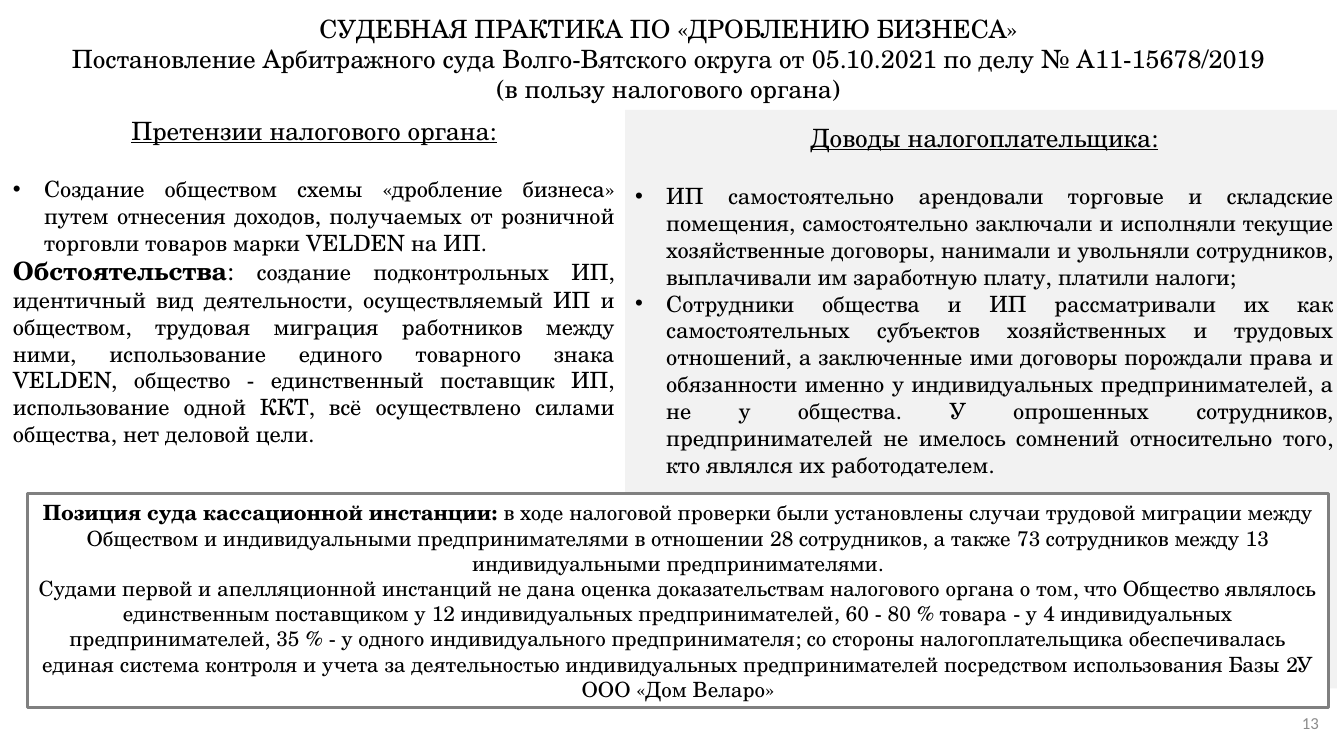
from dataclasses import dataclass

from lxml.etree import SubElement
from pptx import Presentation
from pptx.dml.color import RGBColor
from pptx.enum.shapes import MSO_SHAPE as Shape
from pptx.enum.text import MSO_ANCHOR as Anchor, PP_ALIGN as Align
from pptx.oxml.ns import qn
from pptx.util import Pt

EMU_PER_PX = 9144  # 100 px to the inch


def px(length):
    return length * EMU_PER_PX


@dataclass(frozen=True)
class Theme:
    serif: str = "TeX Gyre Schola"
    sans: str = "Calibri"
    ink: str = "000000"
    paper: str = "FFFFFF"
    panel: str = "F2F2F2"
    frame: str = "808080"
    muted: str = "8C8C8C"
    heading: float = 18
    body: float = 16
    verdict: float = 15
    number: float = 12
    heading_gap: float = 21.5
    frame_width: float = 2.25
    hang: int = 31


THEME = Theme()


def span(text, size=THEME.body, font=THEME.serif, color=THEME.ink, bold=False, underline=False):
    """Describe one piece of text and its format."""
    return dict(text=text, size=size, font=font, color=color, bold=bold, underline=underline)


def para(*spans, align=Align.JUSTIFY, bullet=False, gap=0):
    return dict(spans=spans, align=align, bullet=bullet, gap=gap)


class SlideBuilder:
    def __init__(self, deck, theme):
        self.theme = theme
        self.page = deck.slides.add_slide(deck.slide_layouts[6])

    def panel(self, left, top, width, height, fill, line=None):
        shape = self.page.shapes.add_shape(Shape.RECTANGLE, px(left), px(top), px(width), px(height))
        shape.shadow.inherit = False
        shape.fill.solid()
        shape.fill.fore_color.rgb = RGBColor.from_string(fill)
        if line:
            shape.line.color.rgb = RGBColor.from_string(line)
            shape.line.width = Pt(self.theme.frame_width)
        else:
            shape.line.fill.background()
        return shape

    def text(self, left, top, width, height, paras, anchor=Anchor.TOP):
        box = self.page.shapes.add_textbox(px(left), px(top), px(width), px(height))
        self.fill_text(box, paras, anchor)

    def fill_text(self, box, paras, anchor):
        frame = box.text_frame
        frame.word_wrap = True
        frame.vertical_anchor = anchor
        for index, item in enumerate(paras):
            paragraph = frame.add_paragraph() if index else frame.paragraphs[0]
            paragraph.alignment = item["align"]
            paragraph.space_after = Pt(item["gap"])
            if item["bullet"]:
                self.bullet(paragraph)
            for piece in item["spans"]:
                run = paragraph.add_run()
                run.text = piece["text"]
                run.font.name = piece["font"]
                run.font.size = Pt(piece["size"])
                run.font.bold = piece["bold"]
                run.font.underline = piece["underline"]
                run.font.color.rgb = RGBColor.from_string(piece["color"])

    def bullet(self, paragraph):
        props = paragraph._p.get_or_add_pPr()
        props.set("marL", str(px(self.theme.hang)))
        props.set("indent", str(-px(self.theme.hang)))
        SubElement(props, qn("a:buFont")).set("typeface", "Arial")
        SubElement(props, qn("a:buChar")).set("char", "•")


def column_heading(text):
    return para(span(text, size=THEME.heading, underline=True),
                align=Align.CENTER, gap=THEME.heading_gap)


TITLE = (
    "СУДЕБНАЯ ПРАКТИКА ПО «ДРОБЛЕНИЮ БИЗНЕСА»",
    "Постановление Арбитражного суда Волго-Вятского округа от 05.10.2021 по делу № А11-15678/2019",
    "(в пользу налогового органа)",
)
CLAIM = (
    "Создание обществом схемы «дробление бизнеса» путем отнесения доходов, получаемых "
    "от розничной торговли товаров марки VELDEN на ИП."
)
CIRCUMSTANCES = (
    " создание подконтрольных ИП, идентичный вид деятельности, осуществляемый ИП и обществом, "
    "трудовая миграция работников между ними, использование единого товарного знака VELDEN, "
    "общество - единственный поставщик ИП, использование одной ККТ, всё осуществлено силами "
    "общества, нет деловой цели."
)
ARGUMENTS = (
    "ИП самостоятельно арендовали торговые и складские помещения, самостоятельно заключали и "
    "исполняли текущие хозяйственные договоры, нанимали и увольняли сотрудников, выплачивали им "
    "заработную плату, платили налоги;",
    "Сотрудники общества и ИП рассматривали их как самостоятельных субъектов хозяйственных и "
    "трудовых отношений, а заключенные ими договоры порождали права и обязанности именно у "
    "индивидуальных предпринимателей, а не у общества. У опрошенных сотрудников, "
    "предпринимателей не имелось сомнений относительно того, кто являлся их работодателем.",
)
FINDING = (
    "в ходе налоговой проверки были установлены случаи трудовой миграции между Обществом и "
    "индивидуальными предпринимателями в отношении 28 сотрудников, а также 73 сотрудников между "
    "13 индивидуальными предпринимателями."
)
CRITIQUE = (
    "Судами первой и апелляционной инстанций не дана оценка доказательствам налогового органа о "
    "том, что Общество являлось единственным поставщиком у 12 индивидуальных предпринимателей, "
    "60 - 80 % товара - у 4 индивидуальных предпринимателей, 35 % - у одного индивидуального "
    "предпринимателя; со стороны налогоплательщика обеспечивалась единая система контроля и "
    "учета за деятельностью индивидуальных предпринимателей посредством использования Базы 2У "
    "ООО «Дом Веларо»"
)


def main():
    deck = Presentation()
    deck.slide_width, deck.slide_height = px(1333), px(750)
    slide = SlideBuilder(deck, THEME)

    # Background of the right column
    slide.panel(620, 109, 706, 574, THEME.panel)

    # Title
    slide.text(0, 8, 1326, 162, [
        para(span(line, size=THEME.heading), align=Align.CENTER) for line in TITLE])

    # Tax authority's claims
    slide.text(3, 109, 617, 374, [
        column_heading("Претензии налогового органа:"),
        para(span(CLAIM), bullet=True),
        para(span("Обстоятельства", size=THEME.heading, bold=True),
             span(":", size=THEME.heading), span(CIRCUMSTANCES)),
    ])

    # Taxpayer's arguments
    slide.text(620, 116, 713, 367, [
        column_heading("Доводы налогоплательщика:"),
        *(para(span(argument), bullet=True) for argument in ARGUMENTS),
    ])

    # Position of the cassation court
    verdict = slide.panel(27, 490, 1291, 212, THEME.paper, line=THEME.frame)
    slide.fill_text(verdict, [
        para(span("Позиция суда кассационной инстанции: ", size=THEME.verdict, bold=True),
             span(FINDING, size=THEME.verdict), align=Align.CENTER),
        para(span(CRITIQUE, size=THEME.verdict), align=Align.CENTER),
    ], Anchor.MIDDLE)

    # Page number
    slide.text(1018, 697, 300, 40, [
        para(span("13", size=THEME.number, font=THEME.sans, color=THEME.muted), align=Align.RIGHT),
    ], Anchor.MIDDLE)

    deck.save("out.pptx")


if __name__ == "__main__":
    main()
